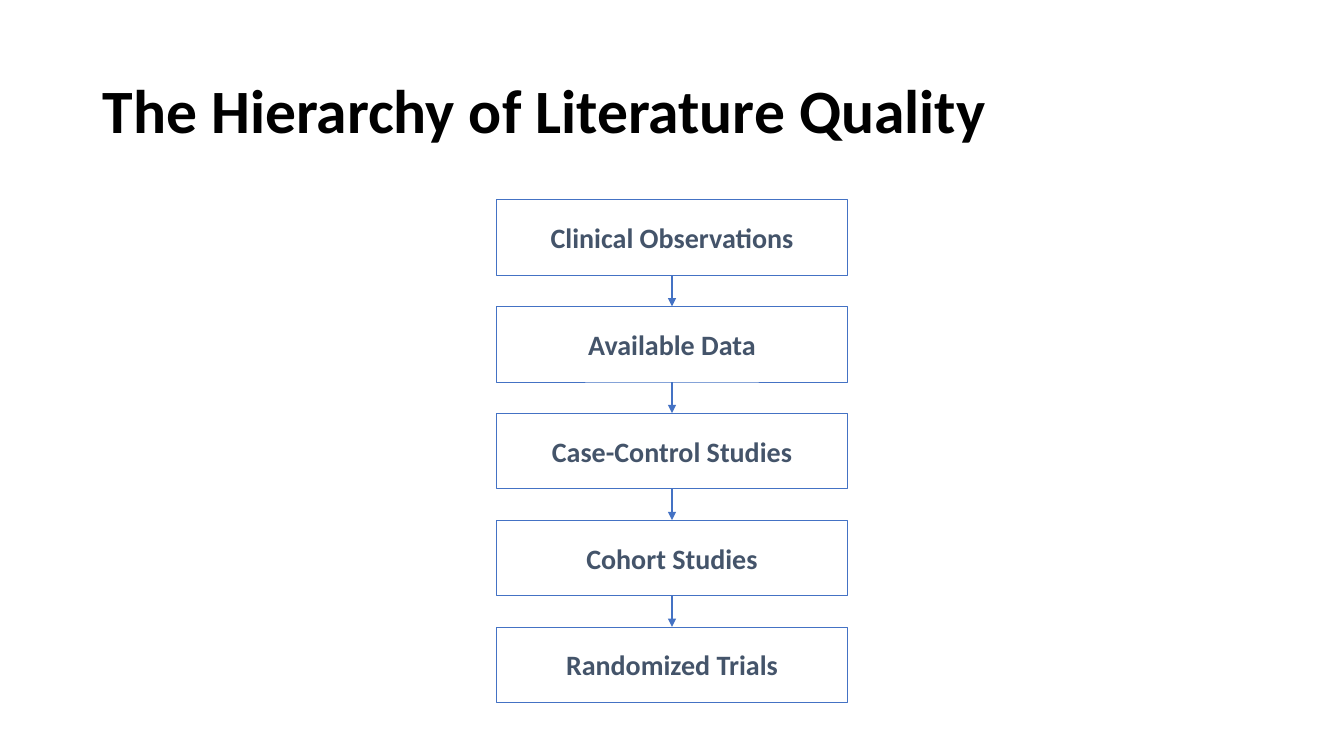
"""Build a slide that ranks study types in a vertical chain of boxes."""
from dataclasses import dataclass
from itertools import pairwise

from lxml.etree import SubElement
from pptx import Presentation
from pptx.dml.color import RGBColor
from pptx.enum.shapes import MSO_CONNECTOR as Connector, MSO_SHAPE as Shape
from pptx.enum.text import MSO_ANCHOR as Anchor, PP_ALIGN as Align
from pptx.oxml.ns import qn
from pptx.util import Inches, Pt

TITLE = "The Hierarchy of Literature Quality"
LEVELS = [
    "Clinical Observations",
    "Available Data",
    "Case-Control Studies",
    "Cohort Studies",
    "Randomized Trials",
]

SLIDE_WIDTH, SLIDE_HEIGHT = 13.33, 7.5
TITLE_AREA = (0.92, 0.4, 11.5, 1.45)
BOX_WIDTH, BOX_HEIGHT = 3.48, 0.75
FIRST_TOP, ROW_PITCH = 1.98, 1.06


@dataclass(frozen=True)
class Theme:
    """Colours, font, type sizes and line widths of the slide."""
    font: str = "Calibri"
    title_color: str = "000000"
    label_color: str = "44546A"
    line_color: str = "4472C4"
    title_size: int = 44
    label_size: int = 20
    border: float = 0.5
    arrow: float = 1


THEME = Theme()


def write_text(shape, text, *, size, color, align, spacing=1.0):
    """Put one bold, vertically centred paragraph into a shape."""
    frame = shape.text_frame
    frame.word_wrap = True
    frame.vertical_anchor = Anchor.MIDDLE
    para = frame.paragraphs[0]
    para.alignment = align
    para.line_spacing = spacing
    span = para.add_run()
    span.text = text
    span.font.name = THEME.font
    span.font.size = Pt(size)
    span.font.bold = True
    span.font.color.rgb = RGBColor.from_string(color)


def style_line(line, width):
    """Give a border or arrow the theme colour and a width."""
    line.color.rgb = RGBColor.from_string(THEME.line_color)
    line.width = Pt(width)


def add_title(page):
    """Place and fill the title placeholder."""
    title = page.shapes.title
    title.left, title.top, title.width, title.height = map(Inches, TITLE_AREA)
    write_text(title, TITLE, size=THEME.title_size, color=THEME.title_color,
               align=Align.LEFT, spacing=0.9)


def add_level(page, row, label):
    """Draw the outlined box of one level."""
    left = (SLIDE_WIDTH - BOX_WIDTH) / 2
    area = (left, FIRST_TOP + row * ROW_PITCH, BOX_WIDTH, BOX_HEIGHT)
    box = page.shapes.add_shape(Shape.RECTANGLE, *map(Inches, area))
    box.shadow.inherit = False
    box.fill.background()
    style_line(box.line, THEME.border)
    write_text(box, label, size=THEME.label_size, color=THEME.label_color,
               align=Align.CENTER)
    return box


def add_arrow(page, upper, lower):
    """Connect the bottom of one box to the top of the next."""
    arrow = page.shapes.add_connector(Connector.STRAIGHT, 0, 0, 0, 0)
    arrow.begin_connect(upper, 2)
    arrow.end_connect(lower, 0)
    style_line(arrow.line, THEME.arrow)
    SubElement(arrow.line._get_or_add_ln(), qn("a:tailEnd"), type="triangle")
    SubElement(arrow._element.spPr, qn("a:effectLst"))


def main():
    """Assemble and save the deck."""
    deck = Presentation()
    deck.slide_width = Inches(SLIDE_WIDTH)
    deck.slide_height = Inches(SLIDE_HEIGHT)
    page = deck.slides.add_slide(deck.slide_layouts.get_by_name("Title Only"))
    add_title(page)
    boxes = [add_level(page, row, label) for row, label in enumerate(LEVELS)]
    for upper, lower in pairwise(boxes):
        add_arrow(page, upper, lower)
    deck.save("out.pptx")


if __name__ == "__main__":
    main()
